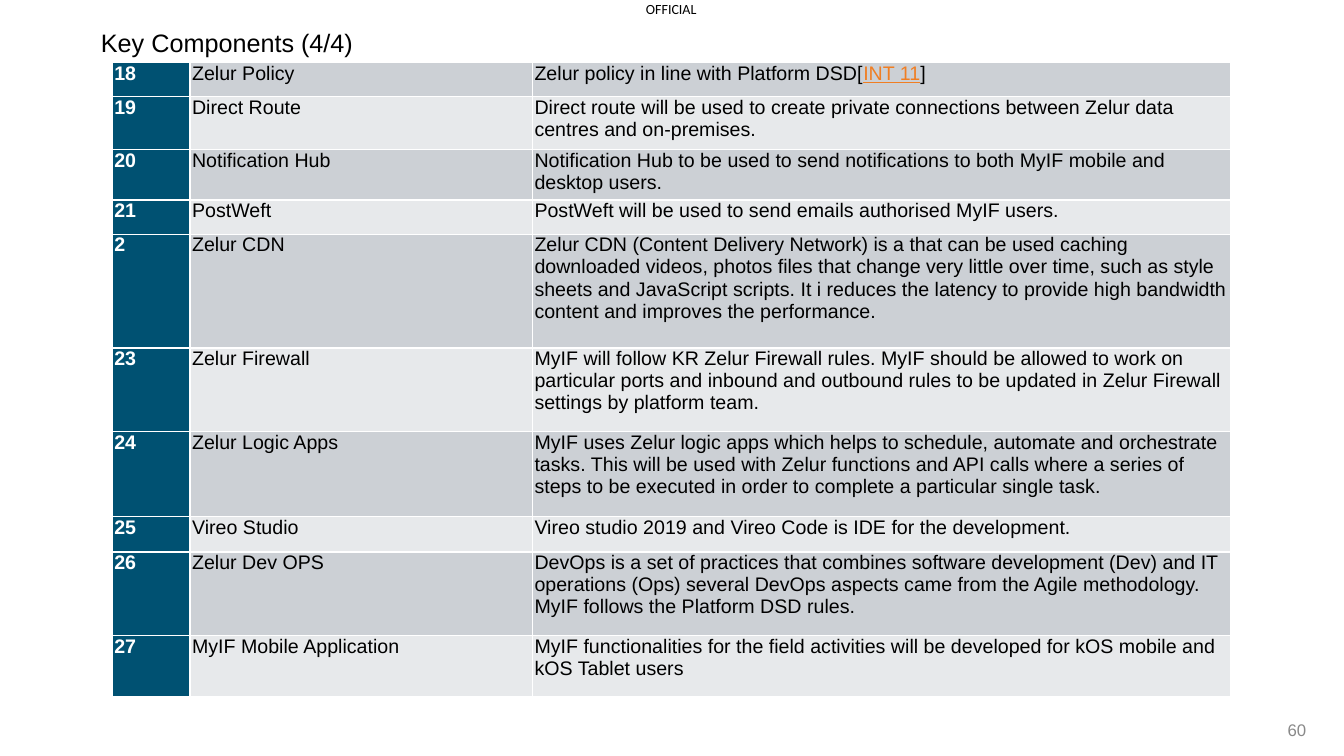
from lxml import etree
from pptx import Presentation
from pptx.dml.color import RGBColor
from pptx.enum import text
from pptx.oxml import parse_xml
from pptx.oxml.ns import nsdecls
from pptx.util import Cm, Pt

BLACK = RGBColor(0x00, 0x00, 0x00)
WHITE = RGBColor(0xFF, 0xFF, 0xFF)
GREY = RGBColor(0x89, 0x89, 0x89)
NAVY = RGBColor(0x00, 0x51, 0x72)
ORANGE = RGBColor(0xF0, 0x7E, 0x23)
BANDS = [RGBColor(0xCC, 0xD0, 0xD5), RGBColor(0xE7, 0xE9, 0xEB)]

REFERENCE = "INT 11"
COLUMN_WIDTHS = [1.96, 8.63, 17.6]
COMPONENTS = [
    (0.86, "18", "Zelur Policy", "Zelur policy in line with Platform DSD[INT 11]"),
    (1.32, "19", "Direct Route",
     "Direct route will be used to create private connections between Zelur data "
     "centres and on-premises."),
    (1.28, "20", "Notification Hub",
     "Notification Hub to be used to send notifications to both MyIF mobile and "
     "desktop users."),
    (0.86, "21", "PostWeft", "PostWeft will be used to send emails authorised MyIF users."),
    (2.87, "2", "Zelur CDN",
     "Zelur CDN (Content Delivery Network) is a that can be used caching "
     "downloaded videos, photos files that change very little over time, such as style "
     "sheets and JavaScript scripts. It i reduces the latency to provide high "
     "bandwidth content and improves the performance."),
    (2.1, "23", "Zelur Firewall",
     "MyIF will follow KR Zelur Firewall rules. MyIF should be allowed to work on "
     "particular ports and inbound and outbound rules to be updated in Zelur Firewall "
     "settings by platform team."),
    (2.14, "24", "Zelur Logic Apps",
     "MyIF uses Zelur logic apps which helps to schedule, automate and orchestrate "
     "tasks. This will be used with Zelur functions and API calls where a series of "
     "steps to be executed in order to complete a particular single task."),
    (0.9, "25", "Vireo Studio", "Vireo studio 2019 and Vireo Code is IDE for the development."),
    (2.1, "26", "Zelur Dev OPS",
     "DevOps is a set of practices that combines software development (Dev) and IT "
     "operations (Ops) several DevOps aspects came from the Agile methodology. "
     "MyIF follows the Platform DSD rules."),
    (1.55, "27", "MyIF Mobile Application",
     "MyIF functionalities for the field activities will be developed for kOS mobile and "
     "kOS Tablet users"),
]


def style(paragraph, name, size, color, bold=False):
    paragraph.font.name = name
    paragraph.font.size = Pt(size)
    paragraph.font.color.rgb = color
    paragraph.font.bold = bold


def add_label(left, top, width, height, words, name, size, color, align):
    frame = slide.shapes.add_textbox(Cm(left), Cm(top), Cm(width), Cm(height)).text_frame
    frame.margin_left = frame.margin_right = frame.margin_top = frame.margin_bottom = 0
    frame.vertical_anchor = text.MSO_ANCHOR.MIDDLE
    frame.text = words
    frame.paragraphs[0].alignment = align
    style(frame.paragraphs[0], name, size, color)


deck = Presentation()
deck.slide_width = Cm(33.87)
deck.slide_height = Cm(19.05)
slide = deck.slides.add_slide(deck.slide_layouts[5])

heading = slide.shapes.title
heading.left, heading.top, heading.width, heading.height = Cm(2.29), Cm(0.56), Cm(25.2), Cm(1.02)
heading.text_frame.text = "Key Components (4/4)"
heading.text_frame.vertical_anchor = text.MSO_ANCHOR.MIDDLE
heading.text_frame.paragraphs[0].alignment = text.PP_ALIGN.LEFT
style(heading.text_frame.paragraphs[0], "Arial", 18, BLACK)

add_label(16.28, 0, 1.4, 0.43, "OFFICIAL", "Calibri", 10, BLACK, text.PP_ALIGN.LEFT)
add_label(30.81, 18.14, 2.11, 0.51, "60", "Arial", 12, GREY, text.PP_ALIGN.RIGHT)

components = slide.shapes.add_table(
    len(COMPONENTS), len(COLUMN_WIDTHS), Cm(2.83), Cm(1.58),
    Cm(sum(COLUMN_WIDTHS)), Cm(sum(row[0] for row in COMPONENTS))).table
components.first_row = False
components.horz_banding = False
for column, width in zip(components.columns, COLUMN_WIDTHS):
    column.width = Cm(width)

for row_index, (height, *entries) in enumerate(COMPONENTS):
    components.rows[row_index].height = Cm(height)
    for column_index, entry in enumerate(entries):
        cell = components.cell(row_index, column_index)
        cell.margin_left = cell.margin_right = Cm(0.05)
        cell.margin_top = cell.margin_bottom = 0
        for side in ("lnL", "lnR", "lnT", "lnB"):
            cell._tc.get_or_add_tcPr().append(parse_xml(
                f'<a:{side} {nsdecls("a")} w="{Pt(1)}"><a:solidFill>'
                f'<a:srgbClr val="{WHITE}"/></a:solidFill></a:{side}>'))
        is_number = column_index == 0
        cell.fill.solid()
        cell.fill.fore_color.rgb = NAVY if is_number else BANDS[row_index % 2]
        paragraph = cell.text_frame.paragraphs[0]
        before, reference, after = entry.partition(REFERENCE)
        for words in filter(None, (before, reference, after)):
            run = paragraph.add_run()
            run.text = words
            if words == REFERENCE:
                run.font.color.rgb = ORANGE
                run.font.underline = True
        style(paragraph, "Arial", 14, WHITE if is_number else BLACK, is_number)

deck.save("out.pptx")
